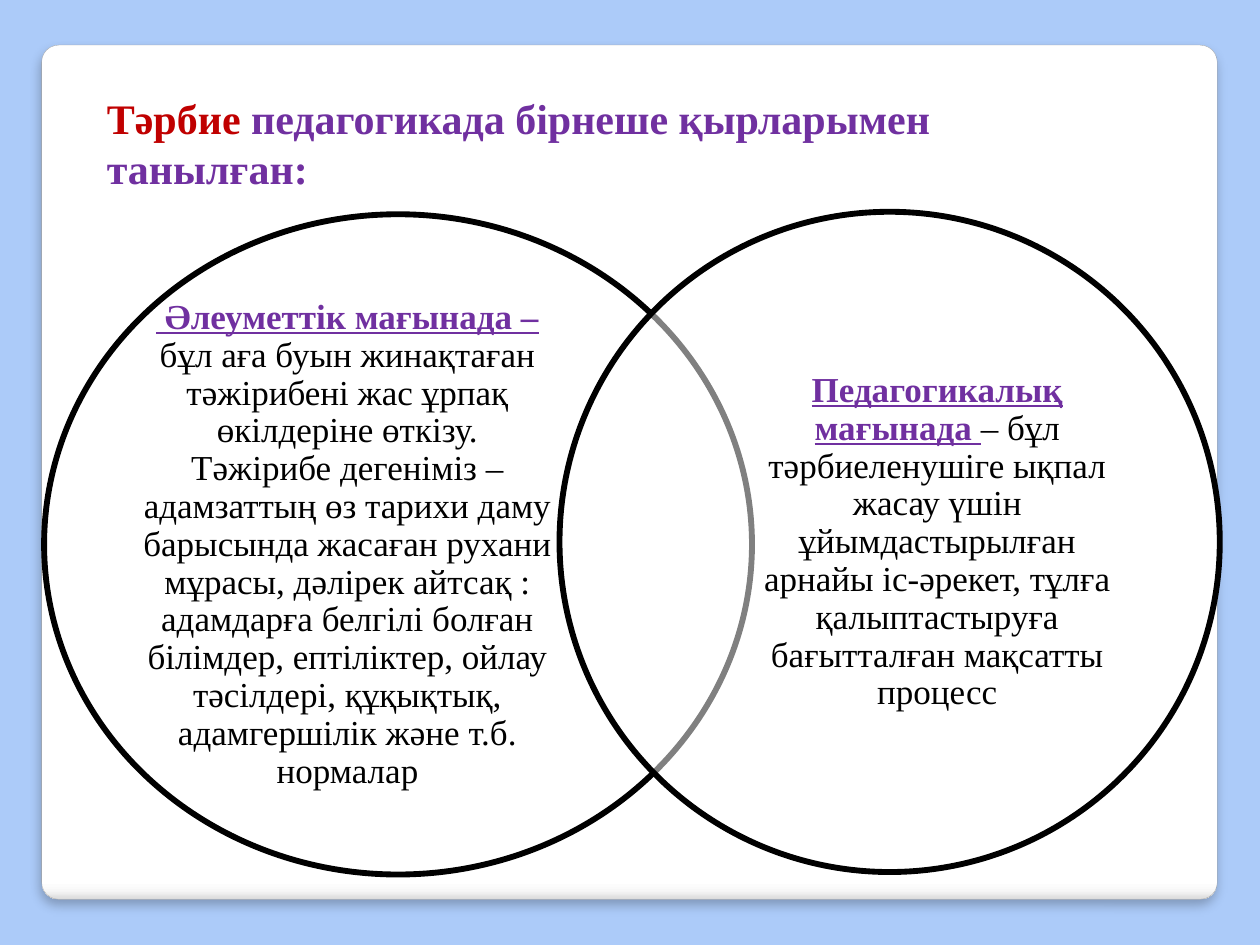
from lxml import etree
from pptx import Presentation
from pptx import util as u
from pptx.dml.color import RGBColor
from pptx.enum import shapes, text
from pptx.oxml import ns

COLORS = {
    "sky": "ACCBF9", "white": "FFFFFF", "mist": "F7F7F7", "silver": "DADADA",
    "edge": "A4A4A4", "black": "000000", "red": "C00000", "violet": "7030A0",
}
FONT = "Times New Roman"
SOCIAL = (
    " Әлеуметтік мағынада – ",
    "бұл аға буын жинақтаған тəжірибені жас ұрпақ өкілдеріне өткізу. "
    "Тəжірибе дегеніміз – адамзаттың өз тарихи даму барысында жасаған рухани "
    "мұрасы, дəлірек айтсақ : адамдарға белгілі болған білімдер, ептіліктер, "
    "ойлау тəсілдері, құқықтық, адамгершілік жəне т.б. нормалар",
)
PEDAGOGICAL = (
    "Педагогикалық мағынада ",
    "– бұл тəрбиеленушіге ықпал жасау үшін ұйымдастырылған арнайы іс-əрекет, "
    "тұлға қалыптастыруға бағытталған мақсатты процесс",
)


def rgb(name):
    """Return the named colour."""
    return RGBColor.from_string(COLORS[name])


def cm_box(*lengths):
    """Turn lengths in centimetres into slide units."""
    return [u.Cm(length) for length in lengths]


def add_child(parent, tag, **attributes):
    """Append a drawing element and return it."""
    return etree.SubElement(
        parent, ns.qn(tag), {key: str(value) for key, value in attributes.items()})


def add_run(paragraph, wording, size, color, bold=False, underline=False):
    """Append a formatted run to the paragraph."""
    run = paragraph.add_run()
    run.text = wording
    run.font.name, run.font.size = FONT, u.Pt(size)
    run.font.bold, run.font.underline = bold, underline
    run.font.color.rgb = rgb(color)


def add_panel(slide, left, top, width, height):
    """Place the rounded white panel with its shadow behind the title."""
    panel = slide.shapes.add_shape(
        shapes.MSO_SHAPE.ROUNDED_RECTANGLE, *cm_box(left, top, width, height))
    panel.adjustments[0] = 0.02
    panel.fill.gradient()
    panel.fill.gradient_angle = 270
    panel.line.color.rgb = rgb("edge")
    panel.line.width = u.Pt(0.16)
    properties = panel._element.spPr
    stops = properties.find(".//" + ns.qn("a:gsLst"))
    stops[:] = []
    for percent, color in ((0, "white"), (98, "white"), (99, "mist"), (100, "silver")):
        stop = add_child(stops, "a:gs", pos=percent * 1000)
        add_child(stop, "a:srgbClr", val=COLORS[color])
    shadow = add_child(add_child(properties, "a:effectLst"), "a:outerShdw",
                       blurRad=u.Pt(6), dist=u.Pt(4), dir=5400000, rotWithShape=0)
    shade = add_child(shadow, "a:srgbClr", val=COLORS["black"])
    add_child(shade, "a:alpha", val=25000)
    slide.shapes.title._element.addprevious(panel._element)


def place_title(slide, left, top, width, height):
    """Place the two-coloured title."""
    title = slide.shapes.title
    title.left, title.top, title.width, title.height = cm_box(left, top, width, height)
    frame = title.text_frame
    frame.auto_size = text.MSO_AUTO_SIZE.NONE
    frame.vertical_anchor = text.MSO_ANCHOR.TOP
    heading = frame.paragraphs[0]
    heading.alignment = text.PP_ALIGN.LEFT
    add_run(heading, "Тəрбие ", 24, "red", bold=True)
    add_run(heading, "педагогикада бірнеше қырларымен танылған:", 24, "violet", bold=True)


def add_meaning(slide, left, top, width, height, inset, text_width, wording):
    """Place a translucent circle and the meaning described inside it."""
    circle = slide.shapes.add_shape(
        shapes.MSO_SHAPE.OVAL, *cm_box(left, top, width, height))
    circle.shadow.inherit = False
    circle.fill.solid()
    circle.fill.fore_color.rgb = rgb("white")
    white = circle._element.spPr.find(ns.qn("a:solidFill"))[0]
    add_child(white, "a:alpha", val=50000)
    circle.line.color.rgb = rgb("black")
    circle.line.width = u.Pt(3.35)

    meaning = slide.shapes.add_textbox(
        *cm_box(left + inset, top + 1.57, text_width, 10.19))
    frame = meaning.text_frame
    frame.word_wrap = True
    frame.vertical_anchor = text.MSO_ANCHOR.MIDDLE
    frame.margin_left = frame.margin_right = frame.margin_top = frame.margin_bottom = 0
    paragraph = frame.paragraphs[0]
    paragraph.alignment = text.PP_ALIGN.CENTER
    paragraph.line_spacing = 0.9
    term, description = wording
    add_run(paragraph, term, 20, "violet", bold=True, underline=True)
    add_run(paragraph, description, 20, "black")


def main():
    """Build and save the slide."""
    deck = Presentation()
    deck.slide_width, deck.slide_height = cm_box(25.4, 19.05)
    slide = deck.slides.add_slide(deck.slide_layouts[5])
    slide.background.fill.solid()
    slide.background.fill.fore_color.rgb = rgb("sky")
    add_panel(slide, 0.84, 0.91, 23.7, 17.22)
    place_title(slide, 1.9, 1.73, 19.61, 2.31)
    add_meaning(slide, 0.89, 4.32, 14.27, 13.31, 2, 8.23, SOCIAL)
    add_meaning(slide, 11.28, 4.27, 13.31, 13.31, 3.78, 7.67, PEDAGOGICAL)
    deck.save("out.pptx")


if __name__ == "__main__":
    main()
